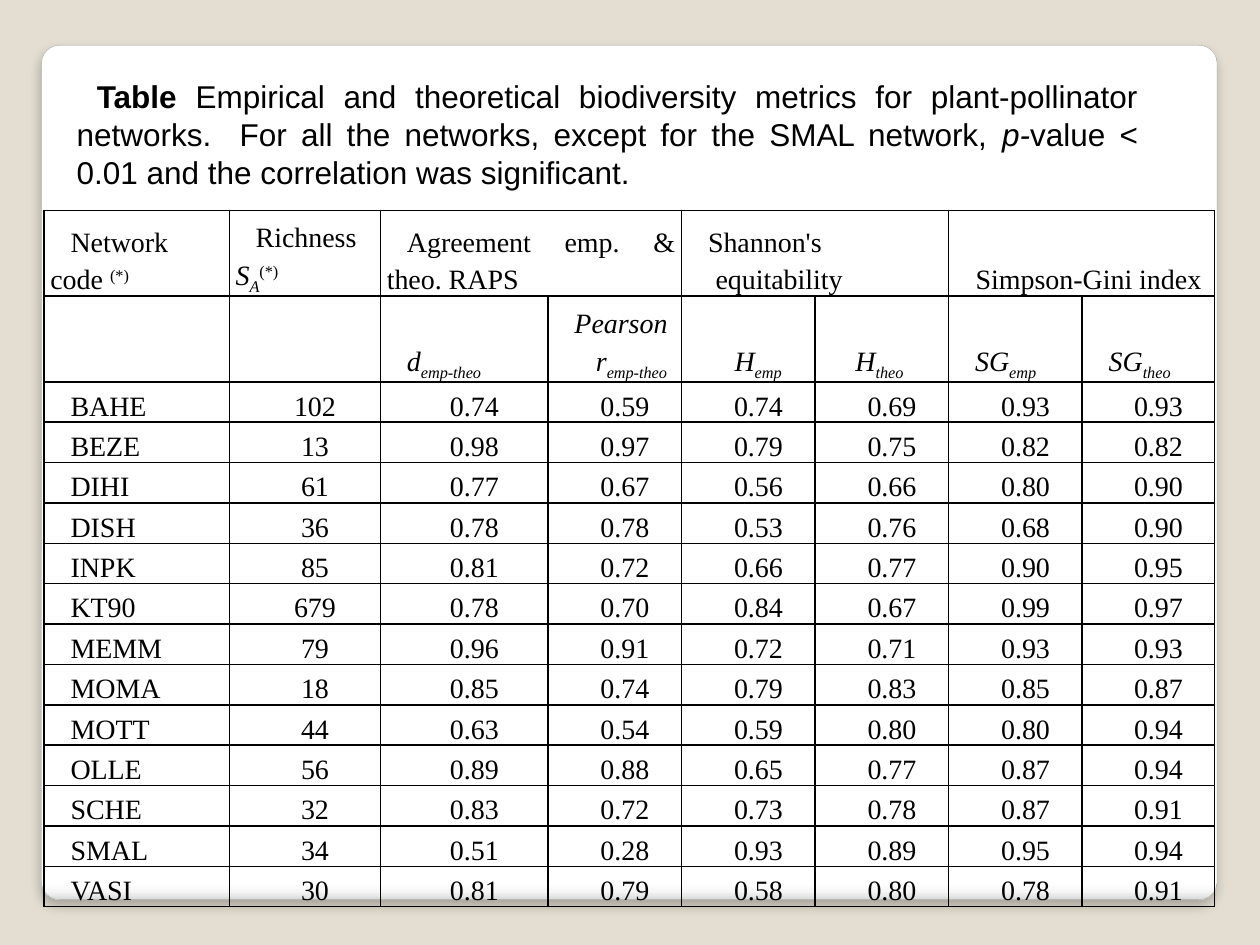
from typing import NamedTuple

from lxml import etree
from pptx import Presentation
from pptx.dml.color import RGBColor
from pptx.enum.shapes import MSO_SHAPE
from pptx.enum.text import MSO_ANCHOR, PP_ALIGN
from pptx.oxml.ns import qn
from pptx.util import Inches, Pt

JUSTIFY, CENTER = PP_ALIGN.JUSTIFY, PP_ALIGN.CENTER
MIDDLE, BOTTOM = MSO_ANCHOR.MIDDLE, MSO_ANCHOR.BOTTOM
ROUNDED = MSO_SHAPE.ROUNDED_RECTANGLE
BLACK = "000000"
INDENT = 0.16
SUBSCRIPT, SUPERSCRIPT = -25, 30
TABLE_HEIGHT, HEADER_HEIGHT = 5.53, 0.68


class Run(NamedTuple):
    text: str
    bold: bool = False
    italic: bool = False
    baseline: int = 0


class Line(NamedTuple):
    runs: list[Run]
    indent: float = INDENT
    align: PP_ALIGN = JUSTIFY


class Header(NamedTuple):
    column: int
    lines: list[Line]
    span: int = 1


def color(value: str) -> RGBColor:
    return RGBColor.from_string(value)


def add_element(parent, tag: str, **attributes):
    names = {name: str(value) for name, value in attributes.items()}
    return etree.SubElement(parent, qn(tag), names)


def write_lines(text_frame, lines: list[Line], font: str, size: float, spacing: float) -> None:
    for index, line in enumerate(lines):
        paragraph = text_frame.paragraphs[0] if index == 0 else text_frame.add_paragraph()
        paragraph.alignment = line.align
        paragraph.line_spacing = spacing
        properties = paragraph._p.get_or_add_pPr()
        properties.set("marL", "0")
        properties.set("indent", str(Inches(line.indent)))
        for part in line.runs:
            run = paragraph.add_run()
            run.text = part.text
            run.font.name = font
            run.font.size = Pt(size)
            run.font.bold = part.bold
            run.font.italic = part.italic
            run.font.color.rgb = color(BLACK)
            if part.baseline:
                run._r.get_or_add_rPr().set("baseline", str(part.baseline * 1000))


def symbol(name: str, subscript: str, indent: float = INDENT) -> Line:
    return Line([Run(name, italic=True), Run(subscript, italic=True, baseline=SUBSCRIPT)], indent)


def plain(text: str, indent: float = INDENT, align: PP_ALIGN = JUSTIFY) -> Line:
    return Line([Run(text)], indent, align)


def fill_cell(cell, lines: list[Line]) -> None:
    cell.vertical_anchor = BOTTOM
    cell.margin_left = cell.margin_right = Inches(0.05)
    cell.margin_top = cell.margin_bottom = 0
    properties = cell._tc.get_or_add_tcPr()
    for side in ("a:lnL", "a:lnR", "a:lnT", "a:lnB"):
        border = add_element(properties, side, w=Pt(1))
        add_element(add_element(border, "a:solidFill"), "a:srgbClr", val=BLACK)
    cell.fill.background()
    write_lines(cell.text_frame, lines, "Times New Roman", 16, 1.2)


def add_card(slide) -> None:
    card = slide.shapes.add_shape(ROUNDED, Inches(0.33), Inches(0.36), Inches(9.33), Inches(6.78))
    card.adjustments[0] = 0.021
    card.fill.gradient()
    card.fill.gradient_angle = 270
    stops = card._element.spPr.find(".//" + qn("a:gsLst"))
    for stop in list(stops):
        stops.remove(stop)
    for position, value in ((0, "FFFFFF"), (98, "FFFFFF"), (99, "F7F7F7"), (100, "DADADA")):
        stop = add_element(stops, "a:gs", pos=position * 1000)
        add_element(stop, "a:srgbClr", val=value)
    card.line.color.rgb = color("A4A4A4")
    card.line.width = Pt(0.16)
    card.shadow.inherit = False
    effects = card._element.spPr.find(qn("a:effectLst"))
    shadow = add_element(effects, "a:outerShdw", blurRad=Pt(6), dist=Pt(4),
                         dir=90 * 60000, algn="t", rotWithShape=0)
    shade = add_element(shadow, "a:srgbClr", val=BLACK)
    add_element(shade, "a:alpha", val=25000)


COLUMN_WIDTHS = [1.47, 1.2, 1.33, 1.06, 1.06, 1.06, 1.06, 1.05]

GROUP_HEADERS = [
    Header(0, [Line([Run("Network code "), Run("(*)", baseline=SUPERSCRIPT)])]),
    Header(1, [Line([Run("Richness"), Run(" S", italic=True),
                     Run("A", italic=True, baseline=SUBSCRIPT),
                     Run("(*)", baseline=SUPERSCRIPT)])]),
    Header(2, [plain("Agreement emp. & theo. RAPS")], 2),
    Header(4, [plain("Shannon's"), plain("equitability", 0.22)], 2),
    Header(6, [plain("Simpson-Gini index", 0.11, CENTER)], 2),
]

METRIC_HEADERS = [
    Header(2, [symbol("d", "emp-theo")]),
    Header(3, [Line([Run("Pearson", italic=True)]), symbol("r", "emp-theo", 0.33)]),
    Header(4, [symbol("H", "emp", 0.37)]),
    Header(5, [symbol("H", "theo", 0.27)]),
    Header(6, [symbol("SG", "emp")]),
    Header(7, [symbol("SG", "theo")]),
]

NETWORKS = """
BAHE 102 0.74 0.59 0.74 0.69 0.93 0.93
BEZE 13 0.98 0.97 0.79 0.75 0.82 0.82
DIHI 61 0.77 0.67 0.56 0.66 0.80 0.90
DISH 36 0.78 0.78 0.53 0.76 0.68 0.90
INPK 85 0.81 0.72 0.66 0.77 0.90 0.95
KT90 679 0.78 0.70 0.84 0.67 0.99 0.97
MEMM 79 0.96 0.91 0.72 0.71 0.93 0.93
MOMA 18 0.85 0.74 0.79 0.83 0.85 0.87
MOTT 44 0.63 0.54 0.59 0.80 0.80 0.94
OLLE 56 0.89 0.88 0.65 0.77 0.87 0.94
SCHE 32 0.83 0.72 0.73 0.78 0.87 0.91
SMAL 34 0.51 0.28 0.93 0.89 0.95 0.94
VASI 30 0.81 0.79 0.58 0.80 0.78 0.91
"""

CAPTION = Line([
    Run("Table ", bold=True),
    Run("Empirical and theoretical biodiversity metrics for plant-pollinator networks.  "
        "For all the networks, except for the SMAL network, "),
    Run("p-", italic=True),
    Run("value < 0.01 and the correlation was significant."),
])


def add_metrics_table(slide) -> None:
    networks = [row.split() for row in NETWORKS.strip().splitlines()]
    headers_by_row = (GROUP_HEADERS, METRIC_HEADERS)
    header_rows = len(headers_by_row)
    frame = slide.shapes.add_table(len(networks) + header_rows, len(COLUMN_WIDTHS), Inches(0.35),
                                   Inches(1.67), Inches(sum(COLUMN_WIDTHS)), Inches(TABLE_HEIGHT))
    table = frame.table
    table.first_row = table.horz_banding = False
    for column, width in zip(table.columns, COLUMN_WIDTHS):
        column.width = Inches(width)
    # Network rows share the height left below the headers
    network_height = (TABLE_HEIGHT - header_rows * HEADER_HEIGHT) / len(networks)
    for index, row in enumerate(table.rows):
        row.height = Inches(HEADER_HEIGHT if index < header_rows else network_height)

    content = {}
    for row, headers in enumerate(headers_by_row):
        for header in headers:
            content[row, header.column] = header.lines
            if header.span > 1:
                last = table.cell(row, header.column + header.span - 1)
                table.cell(row, header.column).merge(last)
    for row, values in enumerate(networks, start=header_rows):
        for column, value in enumerate(values):
            content[row, column] = [plain(value, align=CENTER if column else JUSTIFY)]
    for row in range(len(table.rows)):
        for column in range(len(table.columns)):
            fill_cell(table.cell(row, column), content.get((row, column), []))


def add_caption(slide) -> None:
    box = slide.shapes.add_textbox(Inches(0.51), Inches(0.56), Inches(8.62), Inches(1.01))
    box.text_frame.word_wrap = True
    box.text_frame.vertical_anchor = MIDDLE
    write_lines(box.text_frame, [CAPTION], "Arial", 18, 1.0)


def main() -> None:
    presentation = Presentation()
    presentation.slide_width, presentation.slide_height = Inches(10), Inches(7.5)
    slide = presentation.slides.add_slide(presentation.slide_layouts[6])
    slide.background.fill.solid()
    slide.background.fill.fore_color.rgb = color("E3DED1")
    add_card(slide)
    add_metrics_table(slide)
    add_caption(slide)
    presentation.save("out.pptx")


if __name__ == "__main__":
    main()
